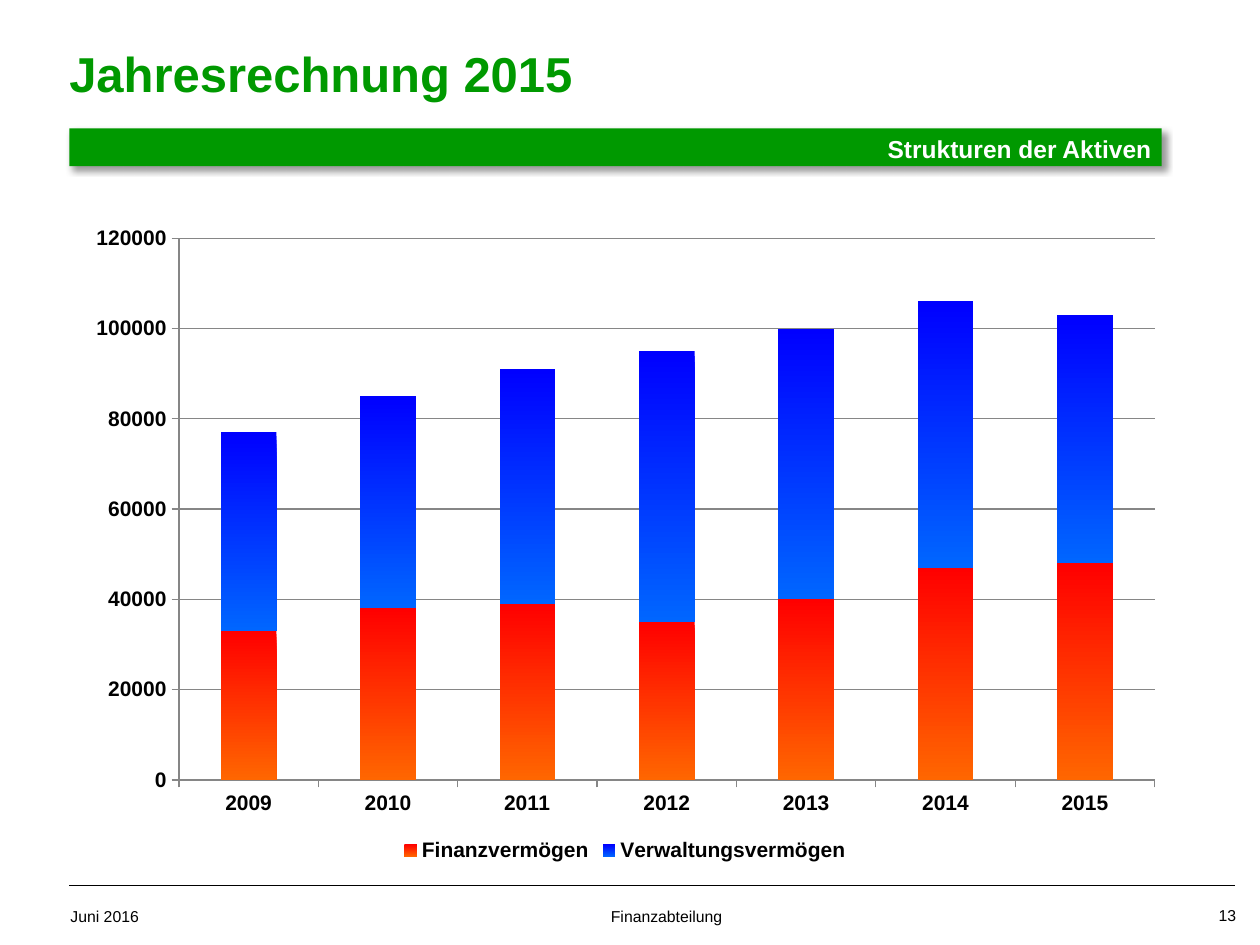
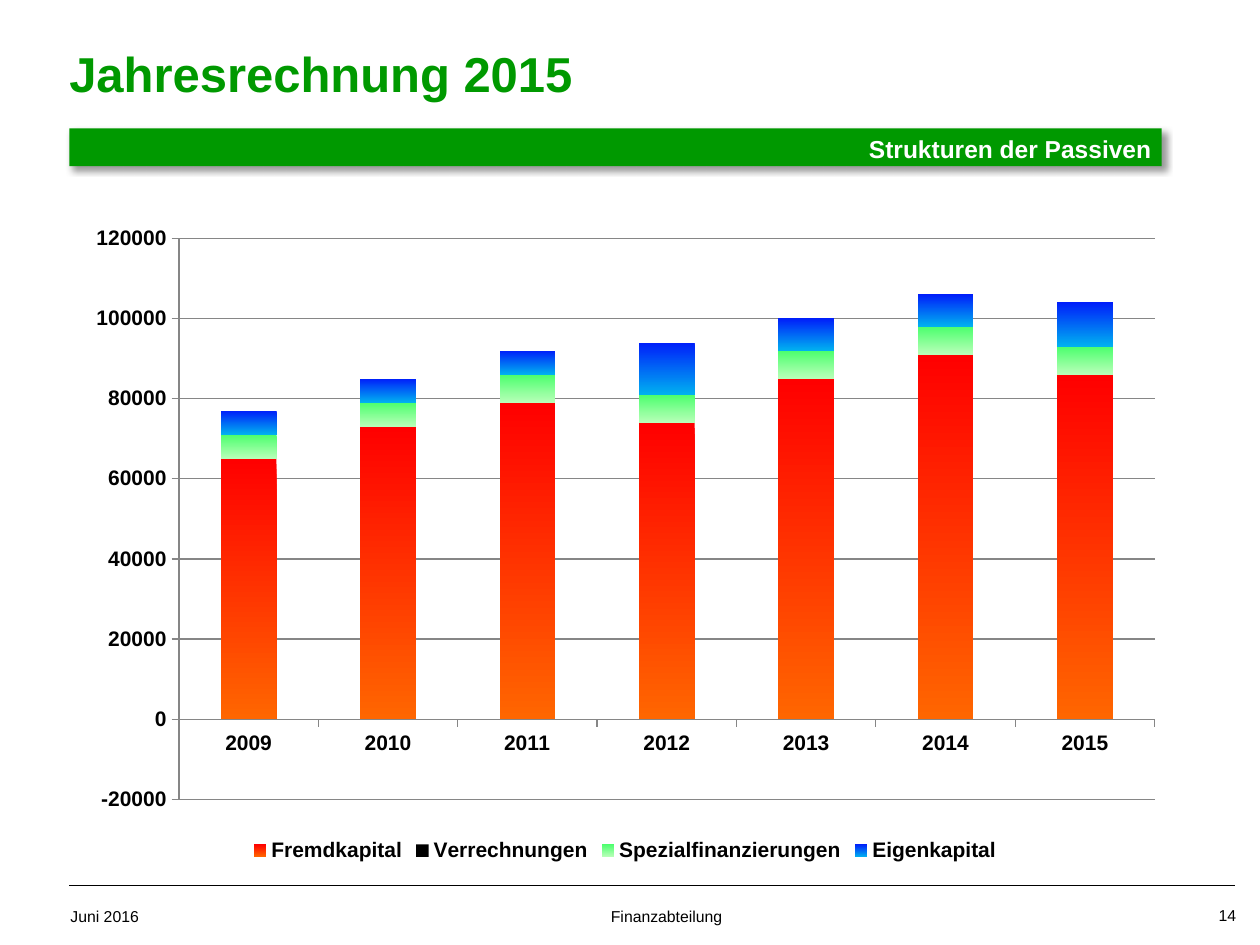
from dataclasses import dataclass
from typing import Any

from lxml import etree
from pptx import Presentation
from pptx.chart.data import CategoryChartData
from pptx.dml.color import RGBColor
from pptx.enum.chart import XL_CHART_TYPE, XL_LEGEND_POSITION, XL_TICK_MARK
from pptx.enum.shapes import MSO_CONNECTOR, MSO_SHAPE
from pptx.enum.text import MSO_ANCHOR, PP_ALIGN
from pptx.oxml import parse_xml
from pptx.oxml.ns import nsdecls, qn
from pptx.util import Inches, Pt

STACKED = XL_CHART_TYPE.COLUMN_STACKED
BOTTOM = XL_LEGEND_POSITION.BOTTOM
OUT = XL_TICK_MARK.OUTSIDE
NO_TICK = XL_TICK_MARK.NONE
RECT = MSO_SHAPE.RECTANGLE
LINE = MSO_CONNECTOR.STRAIGHT
TOP, MIDDLE = MSO_ANCHOR.TOP, MSO_ANCHOR.MIDDLE
LEFT, CENTER, RIGHT = PP_ALIGN.LEFT, PP_ALIGN.CENTER, PP_ALIGN.RIGHT

WIDTH, HEIGHT = Inches(10), Inches(7.5)
COLS, ROWS = 100, 75
GREEN, BLACK, WHITE, GREY = "009900", "000000", "FFFFFF", "868686"
FONT = "Arial"
YEARS = [str(year) for year in range(2009, 2016)]
RED_FADE = ("FF0000", "FF6600")


@dataclass
class Label:
    box: tuple[float, ...]
    size: int
    color: str = BLACK
    bold: bool = False
    align: Any = LEFT
    anchor: Any = TOP
    pad: tuple[float, ...] = (0, 0.05, 0.1, 0.05)
    fill: str = ""


@dataclass
class Series:
    name: str
    fade: tuple[str, ...]
    values: list[int]


@dataclass
class Page:
    topic: str
    number: int
    low: int
    share: float
    series: list[Series]


TITLE = Label((5.5, 1.9, 86, 7.8), 28, GREEN, True, anchor=MIDDLE)
BAND = Label((5.5, 10.2, 86.7, 3), 14, WHITE, True, RIGHT,
             pad=(0, 0.04, 0.08, 0), fill=GREEN)
DATE = Label((5.6, 71.5, 12.4, 2), 9)
NUMBER = Label((93.8, 71.4, 4.3, 2.1), 9, align=RIGHT, pad=(0.1, 0.05, 0, 0.05))
OFFICE = Label((34.7, 71.5, 36.4, 2), 9, align=CENTER, pad=(0.1, 0.05, 0.1, 0.05))
CHART = (5.9, 17, 87.4, 51.8)
RULE = (5.5, 70.3, 98, 70.3)

PAGES = [
    Page("Strukturen der Aktiven", 13, 0, 0.83, [
        Series("Finanzvermögen", RED_FADE,
               [33000, 38000, 39000, 35000, 40000, 47000, 48000]),
        Series("Verwaltungsvermögen", ("0000FF", "0066FF"),
               [44000, 47000, 52000, 60000, 60000, 59000, 55000]),
    ]),
    Page("Strukturen der Passiven", 14, -20000, 0.86, [
        Series("Fremdkapital", RED_FADE,
               [65000, 73000, 79000, 74000, 85000, 91000, 86000]),
        Series("Verrechnungen", (BLACK,), [0] * len(YEARS)),
        Series("Spezialfinanzierungen", ("4BFF6D", "B8FFB8"),
               [6000, 6000, 7000, 7000, 7000, 7000, 7000]),
        Series("Eigenkapital", ("001EFA", "00B0F0"),
               [6000, 6000, 6000, 13000, 8000, 8000, 11000]),
    ]),
]


def rgb(code: str) -> RGBColor:
    return RGBColor.from_string(code)


def place(box: tuple[float, ...]) -> list[int]:
    units = (WIDTH / COLS, HEIGHT / ROWS) * 2
    return [round(part * unit) for part, unit in zip(box, units)]


def style(item: Any, values: dict[str, Any]) -> None:
    for key, value in values.items():
        setattr(item, key, value)


def type_font(font: Any, size: int, color: str, bold: bool) -> None:
    style(font, {"name": FONT, "size": Pt(size), "bold": bold})
    font.color.rgb = rgb(color)


def stroke(line: Any, color: str, width: float) -> None:
    line.color.rgb = rgb(color)
    line.width = Pt(width)


def shade(shape: Any) -> None:
    shape.shadow.inherit = False
    effects = shape.element.spPr.find(qn("a:effectLst"))
    effects.append(parse_xml(
        f'<a:outerShdw {nsdecls("a")} blurRad="{Pt(4)}" dist="{Pt(3)}" '
        'dir="2700000" algn="tl" rotWithShape="0"><a:srgbClr val="000000">'
        '<a:alpha val="40000"/></a:srgbClr></a:outerShdw>'))


def write(slide: Any, label: Label, text: str) -> None:
    if label.fill:
        shape = slide.shapes.add_shape(RECT, *place(label.box))
        shape.fill.solid()
        shape.fill.fore_color.rgb = rgb(label.fill)
        shape.line.fill.background()
        shade(shape)
    else:
        shape = slide.shapes.add_textbox(*place(label.box))
    frame = shape.text_frame
    sides = ("left", "top", "right", "bottom")
    style(frame, {f"margin_{side}": Inches(pad)
                  for side, pad in zip(sides, label.pad)})
    style(frame, {"word_wrap": True, "vertical_anchor": label.anchor})
    para = frame.paragraphs[0]
    para.alignment = label.align
    run = para.add_run()
    run.text = text
    type_font(run.font, label.size, label.color, label.bold)


def rule(slide: Any) -> None:
    line = slide.shapes.add_connector(LINE, *place(RULE))
    stroke(line.line, BLACK, 0.5)
    etree.SubElement(line.element.spPr, qn("a:effectLst"))


def paint(fill: Any, fade: tuple[str, ...]) -> None:
    if len(fade) == 1:
        fill.solid()
        fill.fore_color.rgb = rgb(fade[0])
        return
    fill.gradient()
    fill.gradient_angle = 270
    for stop, color, spot in zip(fill.gradient_stops, fade, (0, 1)):
        stop.color.rgb = rgb(color)
        stop.position = spot


def fix_plot(chart: Any, share: float) -> None:
    area = chart.element.find(".//" + qn("c:plotArea"))
    for old in area.findall(qn("c:layout")):
        area.remove(old)
    spots = {"x": 0.095, "y": 0.037, "w": 0.886, "h": share}
    modes = "".join(f'<c:{axis}Mode val="edge"/>' for axis in "xy")
    parts = "".join(f'<c:{key} val="{spot}"/>' for key, spot in spots.items())
    area.insert(0, parse_xml(
        f'<c:layout {nsdecls("c")}><c:manualLayout>'
        f'<c:layoutTarget val="inner"/>{modes}{parts}'
        '</c:manualLayout></c:layout>'))


def draw_chart(slide: Any, page: Page) -> None:
    data = CategoryChartData()
    data.categories = YEARS
    for item in page.series:
        data.add_series(item.name, item.values)
    chart = slide.shapes.add_chart(STACKED, *place(CHART), data).chart
    style(chart, {"has_title": False, "has_legend": True})
    style(chart.font, {"name": "Calibri", "size": Pt(10)})
    style(chart.legend, {"position": BOTTOM, "include_in_layout": False})
    type_font(chart.legend.font, 12, BLACK, True)
    plot = chart.plots[0]
    style(plot, {"gap_width": 150, "overlap": 100, "vary_by_categories": False})
    for item, bars in zip(page.series, plot.series):
        paint(bars.format.fill, item.fade)
        bars.invert_if_negative = False
    for axis in (chart.category_axis, chart.value_axis):
        style(axis, {"major_tick_mark": OUT, "minor_tick_mark": NO_TICK})
        type_font(axis.tick_labels.font, 12, BLACK, True)
        stroke(axis.format.line, GREY, 0.75)
    scale = chart.value_axis
    style(scale, {"minimum_scale": page.low, "maximum_scale": 120000,
                  "major_unit": 20000, "has_major_gridlines": True})
    stroke(scale.major_gridlines.format.line, GREY, 0.75)
    fix_plot(chart, page.share)


def build(deck: Any, page: Page) -> None:
    slide = deck.slides.add_slide(deck.slide_layouts[6])
    rule(slide)
    for label, text in ((TITLE, "Jahresrechnung 2015"), (BAND, page.topic),
                        (DATE, "Juni 2016"), (NUMBER, str(page.number)),
                        (OFFICE, "Finanzabteilung")):
        write(slide, label, text)
    draw_chart(slide, page)


def main() -> None:
    deck = Presentation()
    style(deck, {"slide_width": WIDTH, "slide_height": HEIGHT})
    for page in PAGES:
        build(deck, page)
    deck.save("out.pptx")


if __name__ == "__main__":
    main()
